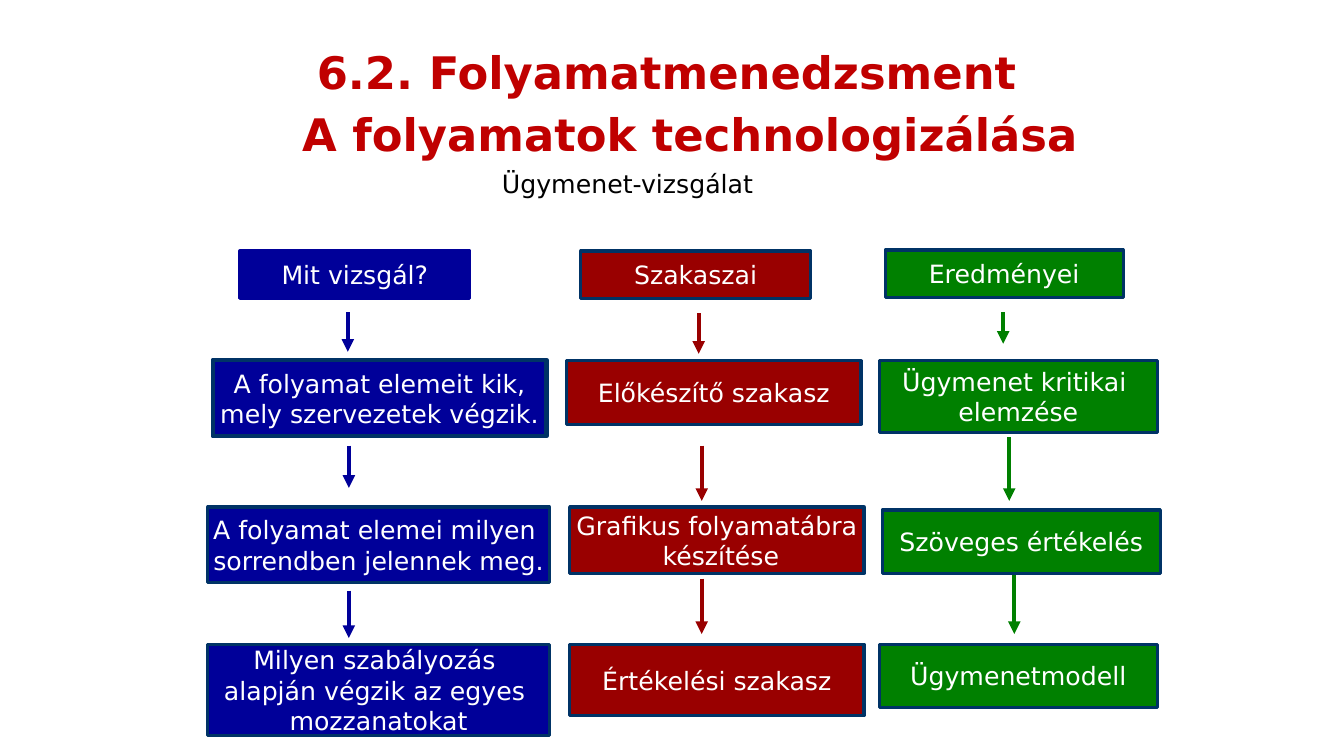
from pptx import Presentation
from pptx import util as u
from pptx.dml.color import RGBColor
from pptx.enum import shapes, text
from pptx.oxml.ns import qn
from lxml import etree

NAVY, BLUE, RED, GREEN = "003366", "000099", "990000", "008000"


def rgb(hex_color):
    return RGBColor.from_string(hex_color)


class FlowSlide:
    font = "DejaVu Sans"

    def __init__(self, prs):
        self.slide = prs.slides.add_slide(prs.slide_layouts[6])

    def add_lines(self, tf, lines, size, color, align, bold=False):
        """Put each line in its own paragraph and return the paragraphs."""
        for i, line in enumerate(lines):
            p = tf.paragraphs[0] if i == 0 else tf.add_paragraph()
            p.alignment = align
            r = p.add_run()
            r.text = line
            r.font.name, r.font.size, r.font.bold = self.font, u.Pt(size), bold
            r.font.color.rgb = rgb(color)
        return tf.paragraphs

    def text(self, at, lines, size, color, align, wrap=True, bold=False):
        sp = self.slide.shapes.add_textbox(*map(u.Inches, at))
        sp.text_frame.word_wrap = wrap
        return self.add_lines(sp.text_frame, lines, size, color, align, bold)

    def title(self, at, lines, left_indents):
        paragraphs = self.text(at, lines, 32, "C00000", text.PP_ALIGN.CENTER, bold=True)
        for i, (p, indent) in enumerate(zip(paragraphs, left_indents)):
            p.line_spacing = 0.9
            p.space_before = u.Pt(10 if i else 0)
            p._p.get_or_add_pPr().set("marL", str(u.Inches(indent)))

    def box(self, at, lines, fill, line=NAVY, width=2.25):
        sp = self.slide.shapes.add_shape(shapes.MSO_SHAPE.RECTANGLE, *map(u.Inches, at))
        sp.shadow.inherit = False
        sp.fill.solid()
        sp.fill.fore_color.rgb = rgb(fill)
        sp.line.color.rgb = rgb(line)
        sp.line.width = u.Pt(width)
        tf = sp.text_frame
        tf.word_wrap = False
        tf.vertical_anchor = text.MSO_ANCHOR.MIDDLE
        self.add_lines(tf, lines, 18, "FFFFFF", text.PP_ALIGN.CENTER)

    def down_arrow(self, x, top, bottom, color):
        c = self.slide.shapes.add_connector(
            shapes.MSO_CONNECTOR.STRAIGHT, *map(u.Inches, (x, top, x, bottom)))
        c.line.color.rgb = rgb(color)
        c.line.width = u.Pt(3)
        spPr = c._element.spPr
        etree.SubElement(spPr.find(qn("a:ln")), qn("a:tailEnd"), type="triangle")
        etree.SubElement(spPr, qn("a:effectLst"))


# Each column: colour, boxes (place, lines, optional line style), arrows (x, top, bottom)
COLUMNS = [
    (BLUE,
     [((2.38, 2.49, 2.28, 0.47), ["Mit vizsgál?"], {"line": BLUE}),
      ((2.11, 3.57, 3.31, 0.76),
       ["A folyamat elemeit kik,", "mely szervezetek végzik."], {"width": 3}),
      ((2.06, 5.03, 3.39, 0.75),
       ["A folyamat elemei milyen ", "sorrendben jelennek meg."], {}),
      ((2.06, 6.39, 3.39, 0.91),
       ["Milyen szabályozás ", "alapján végzik az egyes ", "mozzanatokat"], {})],
     [(3.45, 3.1, 3.49), (3.46, 4.42, 4.84), (3.46, 5.86, 6.33)]),
    (RED,
     [((5.76, 2.49, 2.28, 0.47), ["Szakaszai"], {}),
      ((5.62, 3.58, 2.92, 0.63), ["Előkészítő szakasz"], {}),
      ((5.65, 5.03, 2.92, 0.66), ["Grafikus folyamatábra", " készítése"], {}),
      ((5.65, 6.39, 2.92, 0.71), ["Értékelési szakasz"], {})],
     [(6.93, 3.11, 3.51), (6.96, 4.42, 4.97), (6.96, 5.74, 6.29)]),
    (GREEN,
     [((8.78, 2.48, 2.36, 0.47), ["Eredményei"], {}),
      ((8.72, 3.58, 2.76, 0.71), ["Ügymenet kritikai ", "elemzése"], {}),
      ((8.75, 5.06, 2.76, 0.63), ["Szöveges értékelés"], {}),
      ((8.72, 6.39, 2.76, 0.63), ["Ügymenetmodell"], {})],
     [(9.95, 3.1, 3.41), (10.01, 4.34, 4.97), (10.06, 5.7, 6.29)]),
]


def main():
    prs = Presentation()
    prs.slide_width, prs.slide_height = u.Inches(13.33), u.Inches(7.5)
    s = FlowSlide(prs)
    s.title((0.94, 0.45, 10.59, 0.55),
            ["6.2. Folyamatmenedzsment", "A folyamatok technologizálása"], (0.76, 1.22))
    s.text((4.88, 1.62, 2.72, 0.71), ["Ügymenet-vizsgálat"], 18, "000000",
           text.PP_ALIGN.LEFT, wrap=False)
    for color, boxes, arrows in COLUMNS:
        for at, lines, style in boxes:
            s.box(at, lines, color, **style)
        for arrow in arrows:
            s.down_arrow(*arrow, color)
    prs.save("out.pptx")


if __name__ == "__main__":
    main()
